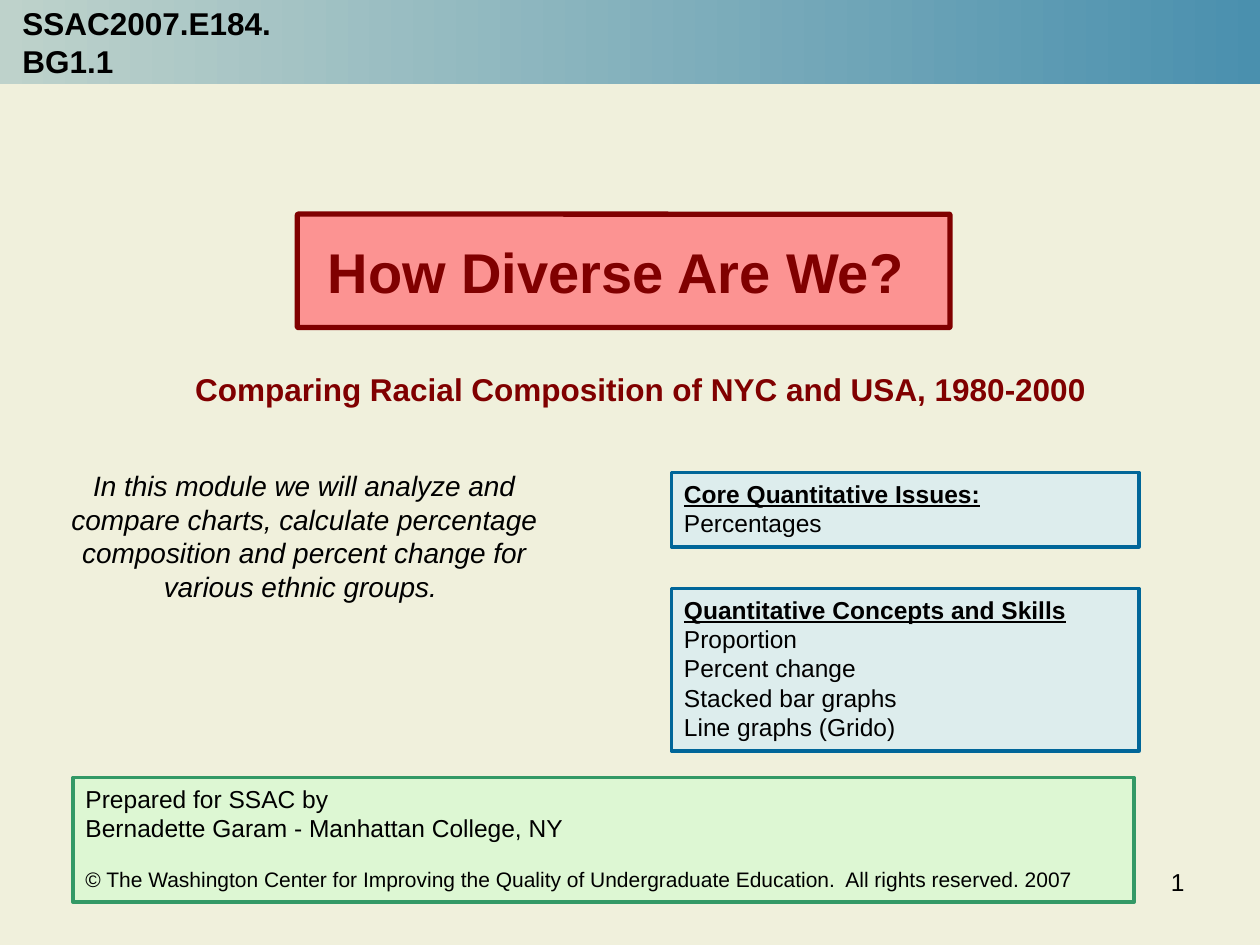
from dataclasses import dataclass
from typing import Optional

from lxml.etree import SubElement
from pptx import Presentation
from pptx.dml.color import RGBColor
from pptx.enum.shapes import MSO_SHAPE
from pptx.enum.text import MSO_ANCHOR, PP_ALIGN
from pptx.oxml.ns import qn
from pptx.util import Inches, Pt


@dataclass(frozen=True)
class Theme:
    font: str = "Arial"
    page: str = "F0F0DC"
    ink: str = "000000"
    maroon: str = "800000"
    pink: str = "FF7C80"
    blue: str = "006699"
    sky: str = "CCECFF"
    green: str = "339966"
    mint: str = "CCFFCC"
    fade: tuple = ("BED2CB", "4A90AE")
    title: int = 32
    head: int = 18
    intro: int = 16
    body: int = 14
    small: int = 12


THEME = Theme()


@dataclass(frozen=True)
class Line:
    text: str
    size: int = THEME.body
    color: str = THEME.ink
    bold: bool = False
    under: bool = False
    slant: bool = False
    before: float = 0
    pitch: float = 1


@dataclass(frozen=True)
class Frame:
    fill: str
    edge: str
    alpha: int = 50
    width: float = 2
    kind: MSO_SHAPE = MSO_SHAPE.RECTANGLE


@dataclass(frozen=True)
class Block:
    at: tuple
    lines: tuple
    frame: Optional[Frame] = None
    align: PP_ALIGN = PP_ALIGN.LEFT
    anchor: MSO_ANCHOR = MSO_ANCHOR.TOP
    wrap: bool = True


def tint(name: str) -> RGBColor:
    return RGBColor.from_string(name)


def place(slide, at: tuple, frame: Optional[Frame]):
    box = [Inches(n) for n in at]
    if frame is None:
        return slide.shapes.add_textbox(*box)
    shape = slide.shapes.add_shape(frame.kind, *box)
    shape.shadow.inherit = False
    if frame.kind == MSO_SHAPE.ROUNDED_RECTANGLE:
        shape.adjustments[0] = 0.01
    shape.fill.solid()
    shape.fill.fore_color.rgb = tint(frame.fill)
    color = shape.fill._xPr.find(qn("a:solidFill"))[0]
    SubElement(color, qn("a:alpha"), val=str(frame.alpha * 1000))
    shape.line.color.rgb = tint(frame.edge)
    shape.line.width = Pt(frame.width)
    return shape


def draw(slide, block: Block) -> None:
    text = place(slide, block.at, block.frame).text_frame
    text.word_wrap = block.wrap
    text.vertical_anchor = block.anchor
    for rank, line in enumerate(block.lines):
        para = text.add_paragraph() if rank else text.paragraphs[0]
        para.alignment = block.align
        para.space_before = Pt(line.before)
        para.line_spacing = line.pitch
        run = para.add_run()
        run.text = line.text
        font = run.font
        font.name, font.size = THEME.font, Pt(line.size)
        font.bold, font.italic, font.underline = line.bold, line.slant, line.under
        font.color.rgb = tint(line.color)


def banner(slide, width: int) -> None:
    bar = slide.shapes.add_shape(MSO_SHAPE.RECTANGLE, 0, 0, width, Inches(0.67))
    bar.shadow.inherit = False
    bar.line.fill.background()
    bar.fill.gradient()
    bar.fill.gradient_angle = 0
    for stop, color in zip(bar.fill.gradient_stops, THEME.fade):
        stop.color.rgb = tint(color)


def topic(top: float, height: float, head: str, *items: str) -> Block:
    lines = (Line(head, bold=True, under=True), *map(Line, items))
    return Block((5.33, top, 3.71, height), lines, Frame(THEME.sky, THEME.blue))


BLOCKS = (
    Block((7.17, 6.83, 2.33, 0.52), (Line("1"),), align=PP_ALIGN.RIGHT),
    Block(
        (2.36, 1.7, 5.18, 0.9),
        (Line("How Diverse Are We? ", THEME.title, THEME.maroon, bold=True),),
        Frame(THEME.pink, THEME.maroon, 80, 3, MSO_SHAPE.ROUNDED_RECTANGLE),
        PP_ALIGN.CENTER,
        MSO_ANCHOR.MIDDLE,
        False,
    ),
    Block(
        (1.42, 2.92, 7.33, 0.58),
        (Line("Comparing Racial Composition of NYC and USA, 1980-2000",
              THEME.head, THEME.maroon, bold=True, pitch=0.9),),
        align=PP_ALIGN.CENTER,
    ),
    Block(
        (0.33, 3.67, 4.17, 1.17),
        (Line("In this module we will analyze and compare charts, calculate "
              "percentage composition and percent change for various ethnic groups. ",
              THEME.intro, slant=True),),
        align=PP_ALIGN.CENTER,
    ),
    Block(
        (0.58, 6.17, 8.42, 0.99),
        (
            Line("Prepared for SSAC by"),
            Line("Bernadette Garam - Manhattan College, NY"),
            Line("© The Washington Center for Improving the Quality of Undergraduate "
                 "Education.  All rights reserved. 2007", THEME.small, before=14),
        ),
        Frame(THEME.mint, THEME.green),
    ),
    topic(4.67, 1.29, "Quantitative Concepts and Skills", "Proportion",
          "Percent change", "Stacked bar graphs", "Line graphs (Grido)"),
    Block(
        (0.08, 0.08, 2.33, 0.5),
        (Line("SSAC2007.E184.BG1.1", THEME.head, bold=True),),
        anchor=MSO_ANCHOR.MIDDLE,
        wrap=False,
    ),
    topic(3.75, 0.59, "Core Quantitative Issues:", "Percentages"),
)


def main() -> None:
    """Build the module's title slide and save it."""
    deck = Presentation()
    deck.slide_width, deck.slide_height = Inches(10), Inches(7.5)
    slide = deck.slides.add_slide(deck.slide_layouts[6])
    slide.background.fill.solid()
    slide.background.fill.fore_color.rgb = tint(THEME.page)
    banner(slide, deck.slide_width)
    for block in BLOCKS:
        draw(slide, block)
    deck.save("out.pptx")


if __name__ == "__main__":
    main()
